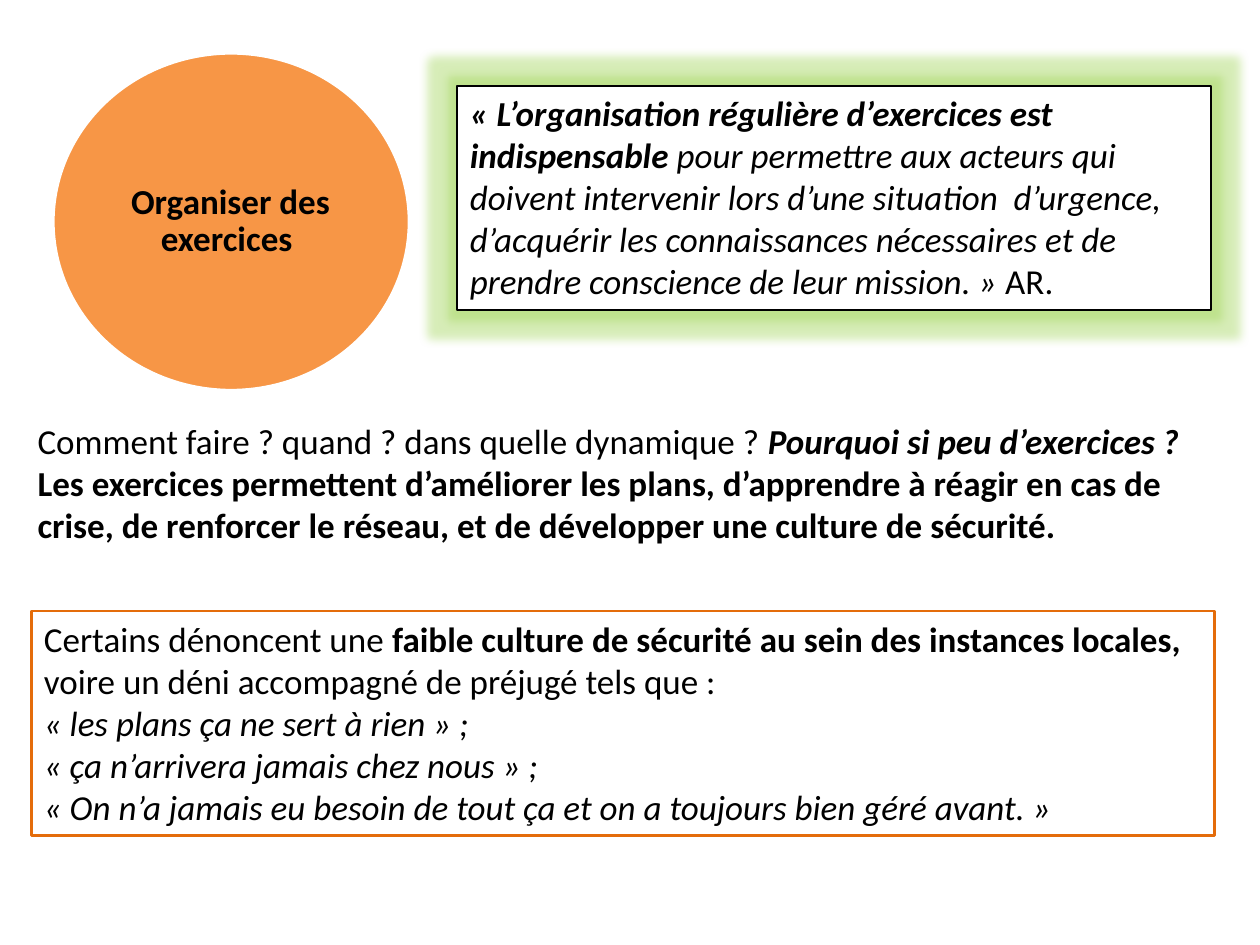
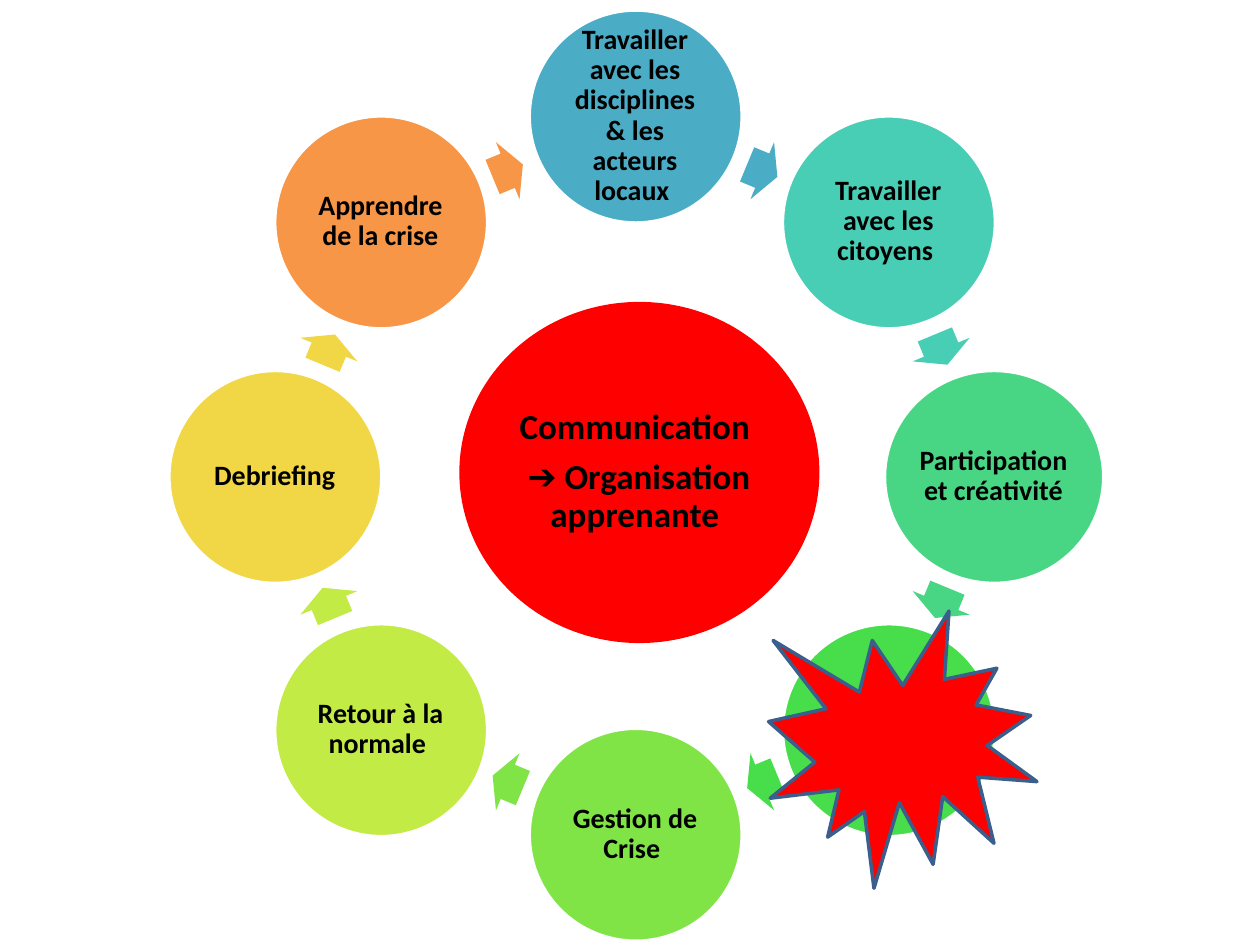
from dataclasses import dataclass
from math import cos, radians, sin, sqrt
from typing import NamedTuple, Optional

from lxml import etree
from pptx import Presentation
from pptx.dml.color import RGBColor
from pptx.enum.shapes import MSO_SHAPE
from pptx.enum.text import MSO_ANCHOR, PP_ALIGN
from pptx.oxml.ns import qn
from pptx.util import Pt

PX = 9144
FONT = "Calibri"
OVAL = MSO_SHAPE.OVAL
RECT = MSO_SHAPE.RECTANGLE
ARROW = MSO_SHAPE.RIGHT_ARROW
BURST = MSO_SHAPE.EXPLOSION1
LEFT, CENTER = PP_ALIGN.LEFT, PP_ALIGN.CENTER
TOP, MIDDLE = MSO_ANCHOR.TOP, MSO_ANCHOR.MIDDLE

BLACK = RGBColor(0x00, 0x00, 0x00)
WHITE = RGBColor(0xFF, 0xFF, 0xFF)
RED = RGBColor(0xFF, 0x00, 0x00)
ORANGE = RGBColor(0xF7, 0x96, 0x46)
DARK_ORANGE = RGBColor(0xE4, 0x6C, 0x0A)
NAVY = RGBColor(0x3A, 0x5F, 0x8C)
GLOW_GREEN = RGBColor(0x9B, 0xD2, 0x4E)
BLUE = RGBColor(0x4B, 0xAC, 0xC6)
TURQUOISE = RGBColor(0x49, 0xCE, 0xB6)
MINT = RGBColor(0x48, 0xD6, 0x84)
GREEN = RGBColor(0x47, 0xDD, 0x4B)
LIGHT_GREEN = RGBColor(0x80, 0xE4, 0x46)
LIME = RGBColor(0xC3, 0xEB, 0x46)
YELLOW = RGBColor(0xF1, 0xD7, 0x46)


class Box(NamedTuple):
    x: int
    y: int
    w: int
    h: int


class Run(NamedTuple):
    text: str
    bold: bool = False
    italic: bool = False


@dataclass(frozen=True)
class Step:
    label: str
    color: RGBColor
    width: int = 169


RING_X, RING_Y = 504, 378
STEP_RADIUS, ARROW_RADIUS = 285, 263
STEP_SIZE = 169
ARROW_W, ARROW_H = 26, 49
HUB_W, HUB_H = 283, 268

STEPS = [
    Step("Travailler avec les disciplines & les acteurs locaux ", BLUE),
    Step("Travailler avec les citoyens ", TURQUOISE),
    Step("Participation et créativité", MINT, 174),
    Step("", GREEN),
    Step("Gestion de Crise ", LIGHT_GREEN),
    Step("Retour à la normale ", LIME),
    Step("Debriefing", YELLOW),
    Step("Apprendre de la crise", ORANGE),
]


def emu(box: Box) -> list[int]:
    return [v * PX for v in box]


def add_shape(s, kind, box: Box, fill: Optional[RGBColor] = None,
              line: Optional[RGBColor] = None, width: float = 1):
    sp = s.shapes.add_shape(kind, *emu(box))
    sp.shadow.inherit = False
    if fill is None:
        sp.fill.background()
    else:
        sp.fill.solid()
        sp.fill.fore_color.rgb = fill
    if line is None:
        sp.line.fill.background()
    else:
        sp.line.color.rgb = line
        sp.line.width = Pt(width)
    return sp


def add_text(sp, paragraphs: list[list[Run]], *, size: int = 20, align=LEFT,
             anchor=TOP, inset: Optional[int] = None, spacing: float = 1,
             after: float = 0) -> None:
    tf = sp.text_frame
    tf.word_wrap = True
    tf.vertical_anchor = anchor
    if inset is not None:
        tf.margin_left = tf.margin_right = inset * PX
        tf.margin_top = tf.margin_bottom = inset * PX
    for i, runs in enumerate(paragraphs):
        p = tf.paragraphs[0] if i == 0 else tf.add_paragraph()
        p.alignment = align
        p.line_spacing = spacing
        p.space_after = Pt(after)
        for run in runs:
            r = p.add_run()
            r.text = run.text
            r.font.name = FONT
            r.font.size = Pt(size)
            r.font.bold = run.bold
            r.font.italic = run.italic
            r.font.color.rgb = BLACK


def add_disc(s, box: Box, fill: RGBColor, line: RGBColor, labels: list[str],
             size: int, frame: Optional[RGBColor] = None) -> None:
    add_shape(s, OVAL, box, fill, line, 2)
    if not labels:
        return
    w, h = round(box.w / sqrt(2)), round(box.h / sqrt(2))
    inner = Box(box.x + (box.w - w) // 2, box.y + (box.h - h) // 2, w, h)
    if frame is None:
        sp = s.shapes.add_textbox(*emu(inner))
    else:
        sp = add_shape(s, RECT, inner, line=frame, width=0.75)
    add_text(sp, [[Run(t, bold=True)] for t in labels], size=size,
             align=CENTER, anchor=MIDDLE, inset=2, spacing=0.9,
             after=round(size * 0.35, 1))


def add_glow(sp, color: RGBColor, radius: int, alpha: int) -> None:
    effects = sp._element.spPr.find(qn("a:effectLst"))
    glow = etree.SubElement(effects, qn("a:glow"), rad=str(Pt(radius)))
    clr = etree.SubElement(glow, qn("a:srgbClr"), val=str(color))
    etree.SubElement(clr, qn("a:alpha"), val=str(alpha * 1000))


def build_exercises(s) -> None:
    sp = s.shapes.add_textbox(*emu(Box(20, 328, 970, 111)))
    add_text(sp, [
        [Run("Comment faire ? quand ? dans quelle dynamique ? "),
         Run("Pourquoi si peu d’exercices ?", True, True)],
        [Run("Les exercices permettent d’améliorer les plans, d’apprendre à "
             "réagir en cas de crise, de renforcer le réseau, et de "
             "développer une culture de sécurité.", True)],
    ])

    quote = add_shape(s, RECT, Box(363, 68, 598, 178), WHITE, BLACK, 1.25)
    add_glow(quote, GLOW_GREEN, 11, 40)
    add_text(quote, [[
        Run("« L’organisation régulière d’exercices est indispensable ",
            True, True),
        Run("pour permettre aux acteurs qui doivent intervenir lors d’une "
            "situation  d’urgence, d’acquérir les connaissances nécessaires "
            "et de prendre conscience de leur mission. »", italic=True),
        Run(" AR."),
    ]])

    add_disc(s, Box(42, 42, HUB_W, HUB_H), ORANGE, WHITE,
             ["Organiser des exercices "], 20)

    prejudices = add_shape(s, RECT, Box(25, 485, 939, 178),
                           line=DARK_ORANGE, width=1.5)
    add_text(prejudices, [
        [Run("Certains dénoncent une "),
         Run("faible culture de sécurité au sein des instances locales, ",
             True),
         Run("voire un déni accompagné de préjugé tels que :")],
        [Run("« les plans ça ne sert à rien » ;", italic=True)],
        [Run("« ça n’arrivera jamais chez nous » ;", italic=True)],
        [Run("« On n’a jamais eu besoin de tout ça et on a toujours bien "
             "géré avant. »", italic=True)],
    ])


def ring_box(angle: float, radius: int, w: int, h: int) -> Box:
    x = RING_X + radius * cos(radians(angle))
    y = RING_Y + radius * sin(radians(angle))
    return Box(round(x - w / 2), round(y - h / 2), w, h)


def build_cycle(s) -> None:
    turn = 360 / len(STEPS)
    for i, step in enumerate(STEPS):
        angle = i * turn - 90
        add_disc(s, ring_box(angle, STEP_RADIUS, step.width, STEP_SIZE),
                 step.color, WHITE, [step.label] if step.label else [], 16)
        box = ring_box(angle + turn / 2, ARROW_RADIUS, ARROW_W, ARROW_H)
        arrow = add_shape(s, ARROW, box, step.color)
        arrow.adjustments[0] = 0.6
        arrow.adjustments[1] = 0.5
        arrow.rotation = (i + 0.5) * turn

    add_shape(s, BURST, Box(610, 485, 213, 220), RED, NAVY, 2)
    add_disc(s, Box(366, 241, HUB_W, HUB_H), RED, RED,
             ["Communication ", "➔ Organisation apprenante "], 20, frame=RED)


def main() -> None:
    prs = Presentation()
    prs.slide_width, prs.slide_height = 1000 * PX, 750 * PX
    for build in (build_exercises, build_cycle):
        build(prs.slides.add_slide(prs.slide_layouts[6]))
    prs.save("out.pptx")


if __name__ == "__main__":
    main()
